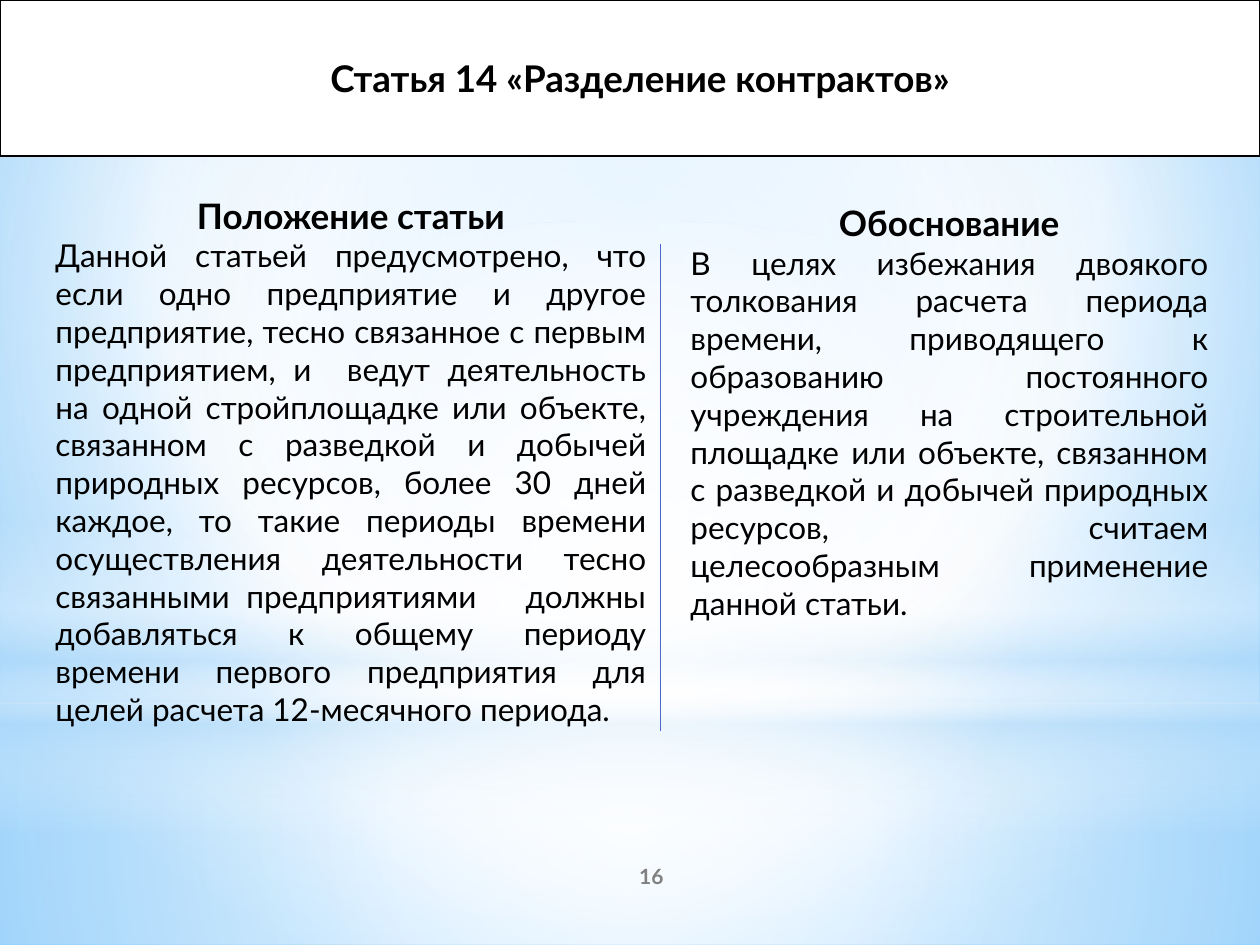
from typing import NamedTuple

from lxml import etree
from pptx import Presentation
from pptx.dml.color import RGBColor
from pptx.enum.shapes import MSO_CONNECTOR, MSO_SHAPE
from pptx.enum.text import MSO_ANCHOR as Anchor, MSO_AUTO_SIZE, PP_ALIGN as Align
from pptx.oxml import parse_xml
from pptx.oxml.ns import nsdecls, qn
from pptx.util import Inches, Pt

FONT = "Lato"
COLORS = {
    "white": "FFFFFF", "black": "000000", "gray": "808080", "divider": "4E67C8",
    "sky": "B4DCFA", "edge": "9ED5FF", "deep": "5BB9FF",
}
CENTER = (50, 50, 50, 50)


class Box(NamedTuple):
    left: float
    top: float
    width: float
    height: float


class Stop(NamedTuple):
    position: int
    color: str
    opacity: int = 100


class Gradient(NamedTuple):
    stops: list[Stop]
    focus: tuple | None = CENTER  # None means a vertical linear gradient


class Panel(NamedTuple):
    box: Box
    gradient: Gradient
    preset: MSO_SHAPE = MSO_SHAPE.RECTANGLE


class Column(NamedTuple):
    box: Box
    anchor: Anchor
    heading: str
    body: str


BACKGROUND = Gradient(
    [Stop(0, "edge"), Stop(60, "white"), Stop(100, "deep")], (20, 10, 20, 60))

PANELS = [
    Panel(Box(0, 5.58, 10, 1.92), Gradient(
        [Stop(0, "white", 91), Stop(37, "white", 76), Stop(100, "sky", 79)])),
    Panel(Box(0, 0, 10, 5.58), Gradient(
        [Stop(0, "white", 89), Stop(48, "white", 62), Stop(100, "sky", 79)])),
    Panel(Box(0, 4.12, 10, 2.5), Gradient(
        [Stop(0, "white", 0), Stop(29, "white", 30), Stop(45, "sky", 40),
         Stop(55, "white", 26), Stop(65, "sky", 60), Stop(100, "white", 0)], None)),
    Panel(Box(0, 1.75, 10, 5.58), Gradient(
        [Stop(0, "white"), Stop(56, "white", 0)]), MSO_SHAPE.OVAL),
]

COLUMNS = [
    Column(
        Box(0.34, 0.71, 4.89, 5.9), Anchor.MIDDLE, "Положение статьи",
        "Данной статьей предусмотрено, что если одно предприятие и другое "
        "предприятие, тесно связанное с первым предприятием, и  ведут деятельность "
        "на одной стройплощадке или объекте, связанном с разведкой и добычей "
        "природных ресурсов, более 30 дней каждое, то такие периоды времени "
        "осуществления деятельности тесно связанными предприятиями   должны "
        "добавляться к общему периоду времени первого предприятия для целей "
        "расчета 12-месячного периода."),
    Column(
        Box(5.38, 1.55, 4.31, 3.47), Anchor.TOP, "Обоснование",
        "В целях избежания двоякого толкования расчета периода времени, "
        "приводящего к образованию постоянного учреждения на строительной "
        "площадке или объекте, связанном с разведкой и добычей природных "
        "ресурсов, считаем целесообразным применение данной статьи."),
]


def rgb(name: str) -> RGBColor:
    return RGBColor.from_string(COLORS[name])


def place(shape, box: Box) -> None:
    shape.left, shape.top, shape.width, shape.height = map(Inches, box)


def apply_gradient(fill, element, gradient: Gradient) -> None:
    """Give the fill found inside element its stops, opacity and direction."""
    fill.gradient()
    stops = "".join(
        f'<a:gs pos="{stop.position * 1000}"><a:srgbClr val="{COLORS[stop.color]}">'
        f'<a:alpha val="{stop.opacity * 1000}"/></a:srgbClr></a:gs>'
        for stop in gradient.stops)
    if gradient.focus is None:
        direction = '<a:lin ang="5400000" scaled="0"/>'
    else:
        sides = " ".join(f'{side}="{value * 1000}"'
                         for side, value in zip("ltrb", gradient.focus))
        direction = f'<a:path path="circle"><a:fillToRect {sides}/></a:path>'
    old = next(element.iter(qn("a:gradFill")))
    old.getparent().replace(old, parse_xml(
        f'<a:gradFill {nsdecls("a")} rotWithShape="1">'
        f"<a:gsLst>{stops}</a:gsLst>{direction}</a:gradFill>"))


def write(paragraph, text: str, *, size: float, bold: bool = False,
          color: str = "black", align: Align = Align.CENTER) -> None:
    paragraph.alignment = align
    paragraph.space_before = Pt(0)
    run = paragraph.add_run()
    run.text = text
    run.font.name = FONT
    run.font.size = Pt(size)
    run.font.bold = bold
    run.font.color.rgb = rgb(color)


def prepare_frame(shape, anchor: Anchor):
    frame = shape.text_frame
    frame.word_wrap = True
    frame.auto_size = MSO_AUTO_SIZE.NONE
    frame.vertical_anchor = anchor
    return frame


def remove_bullet(paragraph) -> None:
    properties = paragraph._p.get_or_add_pPr()
    properties.set("marL", "0")
    properties.set("indent", "0")
    etree.SubElement(properties, qn("a:buNone"))


def draw_panel(slide, panel: Panel) -> None:
    """Draw a background panel behind the title."""
    shape = slide.shapes.add_shape(panel.preset, *map(Inches, panel.box))
    shape.shadow.inherit = False
    shape.line.fill.background()
    apply_gradient(shape.fill, shape.element, panel.gradient)
    slide.shapes.title.element.addprevious(shape.element)


def draw_title(slide, text: str) -> None:
    title = slide.shapes.title
    place(title, Box(0, 0, 10, 1.24))
    title.fill.solid()
    title.fill.fore_color.rgb = rgb("white")
    title.line.color.rgb = rgb("black")
    title.line.width = Pt(1.25)
    frame = prepare_frame(title, Anchor.MIDDLE)
    frame.margin_left = Inches(0.26)
    write(frame.paragraphs[0], text, size=21, bold=True)


def fill_column(placeholder, column: Column) -> None:
    place(placeholder, column.box)
    frame = prepare_frame(placeholder, column.anchor)
    heading, body = frame.paragraphs[0], frame.add_paragraph()
    write(heading, column.heading, size=20, bold=True)
    write(body, column.body, size=18, align=Align.JUSTIFY)
    for paragraph in (heading, body):
        remove_bullet(paragraph)


def draw_divider(slide, x: float, top: float, bottom: float) -> None:
    line = slide.shapes.add_connector(
        MSO_CONNECTOR.STRAIGHT, Inches(x), Inches(top), Inches(x), Inches(bottom))
    line.line.color.rgb = rgb("divider")
    line.line.width = Pt(0.75)
    etree.SubElement(line.element.spPr, qn("a:effectLst"))


def draw_page_number(slide, number: int) -> None:
    box = slide.shapes.add_textbox(*map(Inches, Box(4.17, 6.75, 2, 0.4)))
    frame = prepare_frame(box, Anchor.MIDDLE)
    write(frame.paragraphs[0], str(number), size=12, bold=True, color="gray")


def main() -> None:
    presentation = Presentation()
    presentation.slide_width, presentation.slide_height = Inches(10), Inches(7.5)
    slide = presentation.slides.add_slide(
        presentation.slide_layouts.get_by_name("Two Content"))
    apply_gradient(slide.background.fill, slide.element, BACKGROUND)
    for panel in PANELS:
        draw_panel(slide, panel)
    draw_title(slide, "Статья 14 «Разделение контрактов»")
    for index, column in enumerate(COLUMNS, start=1):
        fill_column(slide.placeholders[index], column)
    draw_divider(slide, 5.24, 1.94, 5.8)
    draw_page_number(slide, 16)
    presentation.save("out.pptx")


if __name__ == "__main__":
    main()
